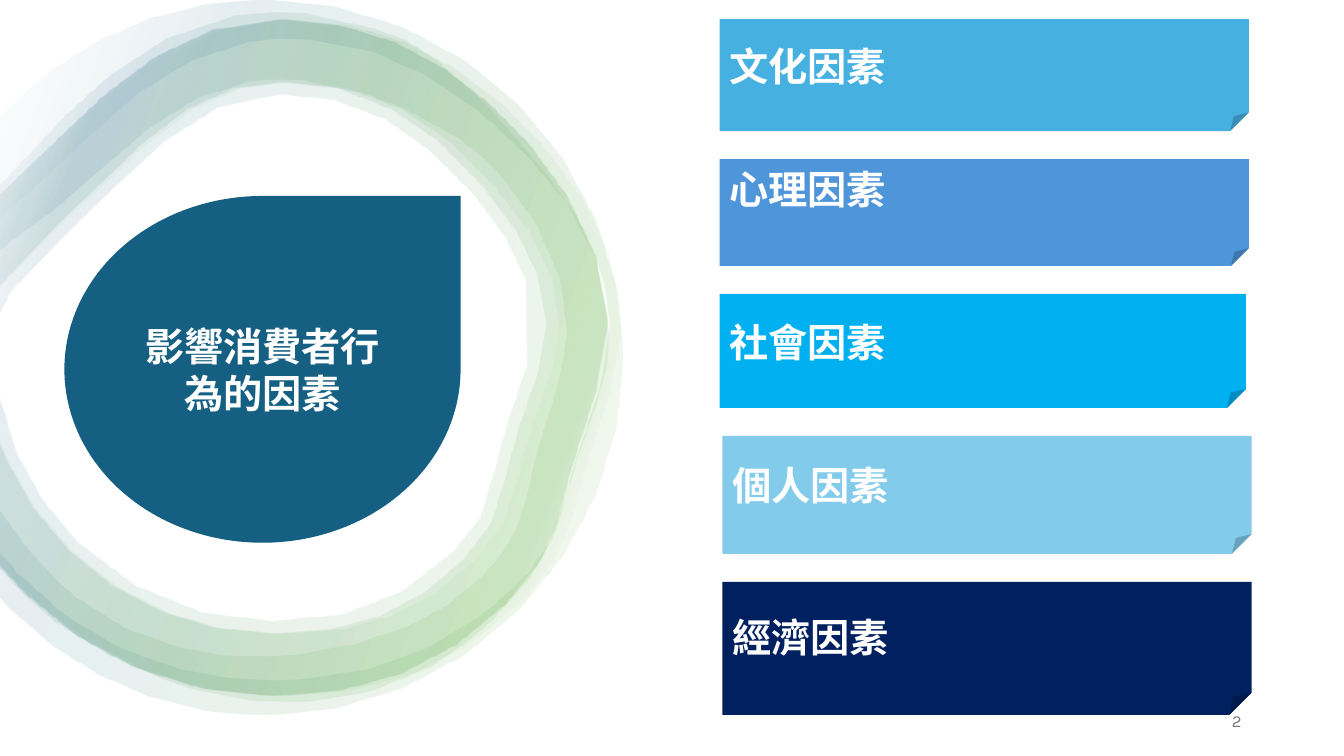
from math import dist
from pptx import Presentation
from pptx.util import Pt
from pptx.dml.color import RGBColor as RGB
from pptx.enum.shapes import MSO_SHAPE as SHAPE
from pptx.enum.text import PP_ALIGN as ALIGN, MSO_ANCHOR as ANCHOR
from pptx.oxml import parse_xml
from pptx.oxml.ns import nsdecls

COLORS = {"white": "FFFFFF", "green": "4EA72E", "teal": "156082", "sky": "46B1E1",
          "blue": "4E95D9", "cyan": "00B0F0", "pale": "83CBEB", "navy": "002060",
          "gray": "797979"}
FONT = "Karla"
UNIT = Pt(0.72)  # one step of the ring coordinates


def bezier(ctrl, step=60):
    """Flatten start point + triples of Bezier controls into short chords."""
    out = [ctrl[0]]
    for i in range(0, len(ctrl) - 1, 3):
        seg = ctrl[i:i + 4]
        n = max(1, round(dist(seg[0], seg[3]) / step))
        for t in (k / n for k in range(1, n + 1)):
            w = ((1 - t) ** 3, 3 * t * (1 - t) ** 2, 3 * t * t * (1 - t), t ** 3)
            out.append(tuple(sum(f * q[j] for f, q in zip(w, seg)) for j in (0, 1)))
    return out


prs = Presentation()
prs.slide_width, prs.slide_height = Pt(960), Pt(540)
s = prs.slides.add_slide(prs.slide_layouts[6])

# White backdrop
sp = s.shapes.add_shape(SHAPE.RECTANGLE, 0, 0, Pt(960), Pt(540))
sp.shadow.inherit = False
sp.fill.solid()
sp.fill.fore_color.rgb = RGB.from_string(COLORS["white"])
sp.line.fill.background()

# Ring outlines: each ring runs along its outer edge, then back along its inner edge
wavy_band = [
    (-1, 185), (39, 143), (60, 120), (108, 76), (165, 39), (233, 16), (274, 13), (304, 14),
    (372, 29), (404, 41), (433, 60), (483, 104), (515, 141), (546, 178), (573, 216),
    (593, 264), (604, 330), (602, 364), (593, 397), (573, 454), (560, 497), (551, 528),
    (526, 573), (487, 616), (462, 637), (427, 661), (365, 686), (299, 696), (250, 694),
    (201, 685), (170, 676), (110, 650), (55, 616), (24, 589), (-1, 562),
    (-1, 504), (28, 544), (58, 576), (75, 591), (124, 622), (180, 642), (223, 649),
    (267, 650), (296, 648), (352, 638), (406, 620), (443, 600), (477, 572), (496, 551),
    (510, 528), (520, 502), (534, 443), (553, 383), (563, 330), (555, 275), (532, 223),
    (498, 176), (477, 155), (454, 137), (403, 109), (365, 94), (298, 80), (264, 80),
    (245, 82), (196, 98), (149, 127), (104, 165), (57, 206), (8, 242), (-1, 250)]
band_outer = bezier([
    (8, 185), (23, 171), (39, 156), (55, 140), (118, 77), (182, 19), (278, 19),
    (383, 19), (461, 70), (525, 143), (578, 205), (625, 294), (591, 387),
    (545, 511), (565, 535), (502, 598), (439, 661), (367, 690), (270, 690),
    (175, 690), (89, 651), (26, 589), (18, 581), (10, 573), (3, 564)])
thin_inner = bezier([
    (6, 454), (21, 488), (42, 519), (69, 546), (123, 599), (194, 628), (270, 628),
    (311, 628), (346, 623), (376, 611), (406, 599), (433, 581), (459, 555),
    (477, 537), (483, 526), (487, 518), (492, 507), (496, 493), (501, 473),
    (507, 448), (516, 413), (534, 366), (544, 337), (544, 306), (533, 273),
    (523, 244), (504, 213), (478, 184), (449, 149), (419, 125), (388, 108),
    (354, 89), (318, 81), (278, 81), (246, 81), (217, 89), (186, 108),
    (155, 127), (126, 156), (98, 184), (85, 197), (73, 208), (60, 220),
    (36, 241), (16, 260), (2, 281)])
wide_inner = bezier([
    (1, 396), (5, 414), (10, 432), (17, 449), (32, 482), (52, 512), (77, 537),
    (129, 588), (198, 616), (271, 616), (348, 616), (401, 595), (450, 546),
    (467, 530), (473, 520), (476, 513), (481, 503), (484, 489), (489, 470),
    (496, 445), (504, 410), (522, 362), (532, 335), (531, 308), (521, 277),
    (511, 249), (494, 220), (469, 192), (440, 159), (412, 135), (382, 118),
    (350, 101), (316, 93), (278, 93), (212, 93), (165, 134), (107, 192),
    (94, 205), (81, 217), (69, 229), (45, 250), (25, 268), (12, 288),
    (6, 296), (2, 304), (-1, 313)])
circle_outer = bezier([
    (12, 104), (76, 40), (164, 0), (262, 0), (458, 0), (617, 159), (617, 354),
    (617, 550), (458, 709), (262, 709), (164, 709), (76, 669), (12, 605)])
circle_inner = [
    (-1, 545), (16, 566), (64, 609), (119, 642), (178, 663), (225, 671), (272, 674),
    (303, 672), (365, 663), (423, 642), (477, 609), (501, 589), (523, 567), (541, 541),
    (553, 511), (563, 480), (572, 449), (593, 386), (604, 323), (600, 291), (591, 260),
    (562, 203), (521, 154), (474, 111), (423, 76), (367, 51), (307, 40), (276, 39),
    (246, 42), (189, 61), (137, 93), (89, 135), (41, 180), (16, 202), (-1, 218)]

band_edge = [(-1, 193), *band_outer, (-1, 559)]
thin_band = [*band_edge, (-1, 435), *thin_inner, (-1, 285)]
wide_band = [*band_edge, (-1, 384), *wide_inner]
circle_band = [(-1, 118), *circle_outer, (-1, 591), *circle_inner]

# Rings: outline, horizontal stretch and shift, gradient stops
rings = [
    (wavy_band, 1, 0, [(37, "green"), (85, "teal"), (100, "white")]),
    (thin_band, 1.02, 1.5, [(2, "white"), (54, "green"), (100, "white")]),
    (wide_band, 1, 0, [(2, "white"), (16, "green"), (85, "teal"), (100, "white")]),
    (thin_band, 1, 0, [(2, "white"), (16, "green"), (85, "teal"), (100, "white")]),
    (circle_band, 1, 0, [(2, "white"), (16, "green"), (74, "teal"), (100, "white")]),
]
for outline, stretch, shift, stops in rings:
    pts = [((x * stretch + shift) * UNIT, y * UNIT) for x, y in outline]
    fb = s.shapes.build_freeform(*pts[0])
    fb.add_line_segments(pts[1:], close=True)
    sp = fb.convert_to_shape()
    sp.shadow.inherit = False
    sp.line.fill.background()
    gs = "".join(f'<a:gs pos="{pos * 1000}"><a:srgbClr val="{COLORS[name]}">'
                 '<a:alpha val="10000"/></a:srgbClr></a:gs>' for pos, name in stops)
    sp._element.spPr.insert(2, parse_xml(
        f'<a:gradFill {nsdecls("a")} rotWithShape="1"><a:gsLst>{gs}</a:gsLst>'
        f'<a:lin ang="{200 * 60000}" scaled="0"/></a:gradFill>'))

# Topic drop and factor cards: shape, text, colour, left, top, width, height, bottom inset
items = [(SHAPE.TEAR, "影響消費者行為的因素", "teal", 46, 140, 283, 247.7, 3.6)]
top = 13.7
for text, color, left, width, height, inset in [
        ("文化因素", "sky", 514, 378, 80, 3.6),
        ("心理因素", "blue", 514, 378, 76.3, 25.2),
        ("社會因素", "cyan", 514, 376, 81.4, 3.6),
        ("個人因素", "pale", 516, 378, 84.2, 3.6),
        ("經濟因素", "navy", 516, 378, 95, 3.6)]:
    items.append((SHAPE.FOLDED_CORNER, text, color, left, top, width, height, inset))
    top += height + 20

for kind, text, color, left, y, width, height, inset in items:
    sp = s.shapes.add_shape(kind, Pt(left), Pt(y), Pt(width), Pt(height))
    sp.shadow.inherit = False
    sp.fill.solid()
    sp.fill.fore_color.rgb = RGB.from_string(COLORS[color])
    sp.line.fill.background()
    tf = sp.text_frame
    tf.word_wrap = True
    tf.vertical_anchor = ANCHOR.MIDDLE
    tf.margin_bottom = Pt(inset)
    p = tf.paragraphs[0]
    p.alignment = ALIGN.CENTER if kind == SHAPE.TEAR else ALIGN.LEFT
    r = p.add_run()
    r.text = text
    r.font.name, r.font.size, r.font.bold = FONT, Pt(28), True
    r.font.color.rgb = RGB.from_string(COLORS["white"])

# Page number
tf = s.shapes.add_textbox(Pt(678), Pt(500.4), Pt(216), Pt(28.8)).text_frame
tf.word_wrap = True
tf.vertical_anchor = ANCHOR.MIDDLE
p = tf.paragraphs[0]
p.alignment = ALIGN.RIGHT
r = p.add_run()
r.text = "2"
r.font.name, r.font.size = FONT, Pt(12)
r.font.color.rgb = RGB.from_string(COLORS["gray"])

prs.save("out.pptx")
